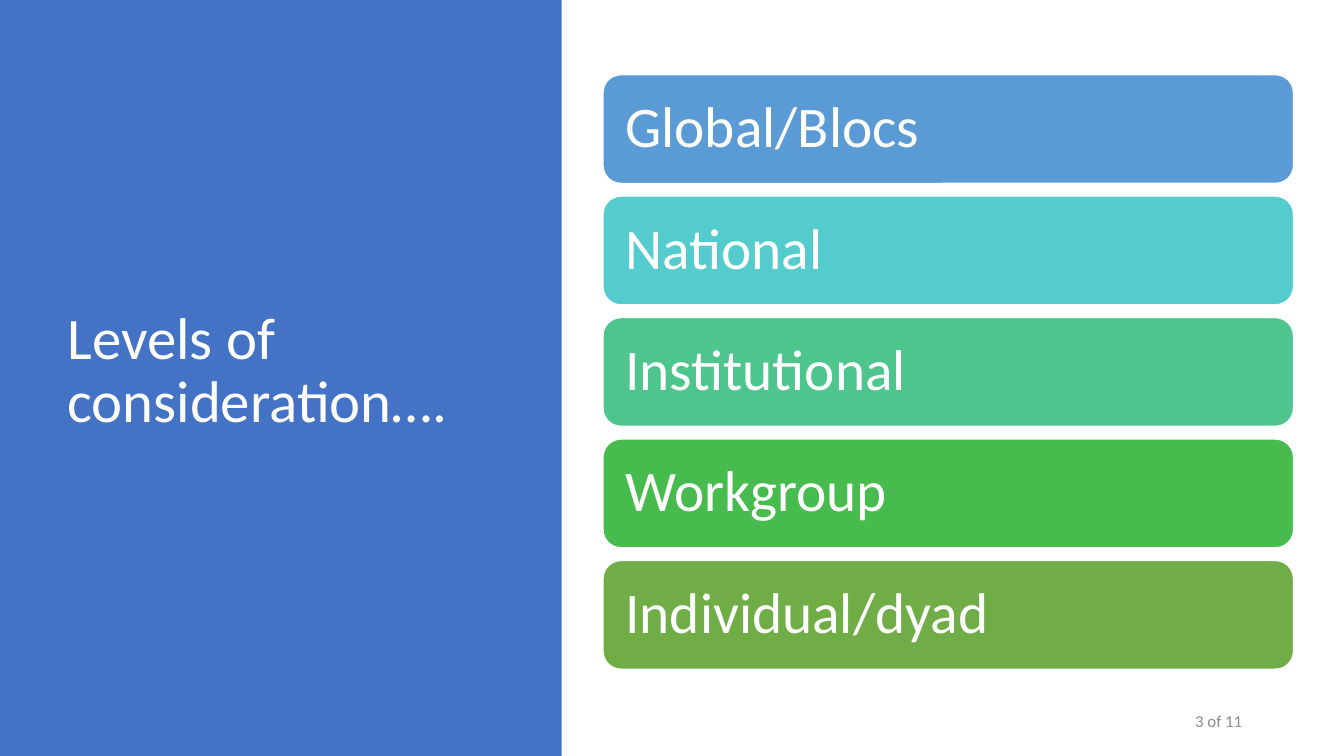
from dataclasses import dataclass

from pptx import Presentation
from pptx.dml.color import RGBColor
from pptx.enum import shapes, text
from pptx.util import Inches, Pt


@dataclass(frozen=True)
class Theme:
    font: str = "Calibri"
    panel: str = "4472C4"
    white: str = "FFFFFF"
    muted: str = "8C8C8C"
    title_size: int = 42
    level_size: int = 41
    page_size: int = 12


LEVELS = [
    ("Global/Blocs", "5B9BD5"),
    ("National", "54CCCD"),
    ("Institutional", "4DC58D"),
    ("Workgroup", "48BB4F"),
    ("Individual/dyad", "70AD47"),
]
FIRST_LEVEL_TOP = 0.74
LEVEL_GAP = 0.125
LEVEL_HEIGHT = 1.08


class SlideBuilder:
    def __init__(self, slide, theme):
        self.slide = slide
        self.theme = theme

    def block(self, kind, left, top, width, height, fill, outline=None):
        block = self.slide.shapes.add_shape(
            kind, Inches(left), Inches(top), Inches(width), Inches(height))
        block.shadow.inherit = False
        block.fill.solid()
        block.fill.fore_color.rgb = RGBColor.from_string(fill)
        if outline:
            block.line.color.rgb = RGBColor.from_string(outline)
            block.line.width = Pt(1)
        else:
            block.line.fill.background()
        return block

    def set_wording(self, holder, wording, size, color,
                    align=text.PP_ALIGN.LEFT, line_spacing=None):
        """Fill a shape or text box with one vertically centred paragraph."""
        frame = holder.text_frame
        frame.word_wrap = True
        frame.vertical_anchor = text.MSO_ANCHOR.MIDDLE
        frame.text = wording
        paragraph = frame.paragraphs[0]
        paragraph.alignment = align
        paragraph.line_spacing = line_spacing
        font = paragraph.runs[0].font
        font.name = self.theme.font
        font.size = Pt(size)
        font.color.rgb = RGBColor.from_string(color)

    def label(self, wording, left, top, width, height, size, color, **layout):
        box = self.slide.shapes.add_textbox(
            Inches(left), Inches(top), Inches(width), Inches(height))
        self.set_wording(box, wording, size, color, **layout)

    def level(self, wording, top, fill):
        bar = self.block(shapes.MSO_SHAPE.ROUNDED_RECTANGLE,
                         5.98, top, 6.85, LEVEL_HEIGHT, fill, self.theme.white)
        frame = bar.text_frame
        frame.margin_left = frame.margin_right = Inches(0.17)
        frame.margin_top = frame.margin_bottom = Inches(0.17)
        self.set_wording(bar, wording, self.theme.level_size, self.theme.white,
                         line_spacing=0.9)


def main():
    deck = Presentation()
    deck.slide_width, deck.slide_height = Inches(13.33), Inches(7.5)
    theme = Theme()
    builder = SlideBuilder(deck.slides.add_slide(deck.slide_layouts[6]), theme)

    builder.block(shapes.MSO_SHAPE.RECTANGLE, 0, 0, 5.57, 7.5, theme.panel)
    builder.label("Levels of consideration….", 0.57, 0.68, 4.16, 6.02,
                  theme.title_size, theme.white, line_spacing=0.9)
    builder.label("3 of 11", 9.42, 6.95, 3, 0.4,
                  theme.page_size, theme.muted, align=text.PP_ALIGN.RIGHT)
    for row, (level_name, fill) in enumerate(LEVELS):
        top = FIRST_LEVEL_TOP + row * (LEVEL_HEIGHT + LEVEL_GAP)
        builder.level(level_name, top, fill)

    deck.save("out.pptx")


if __name__ == "__main__":
    main()
